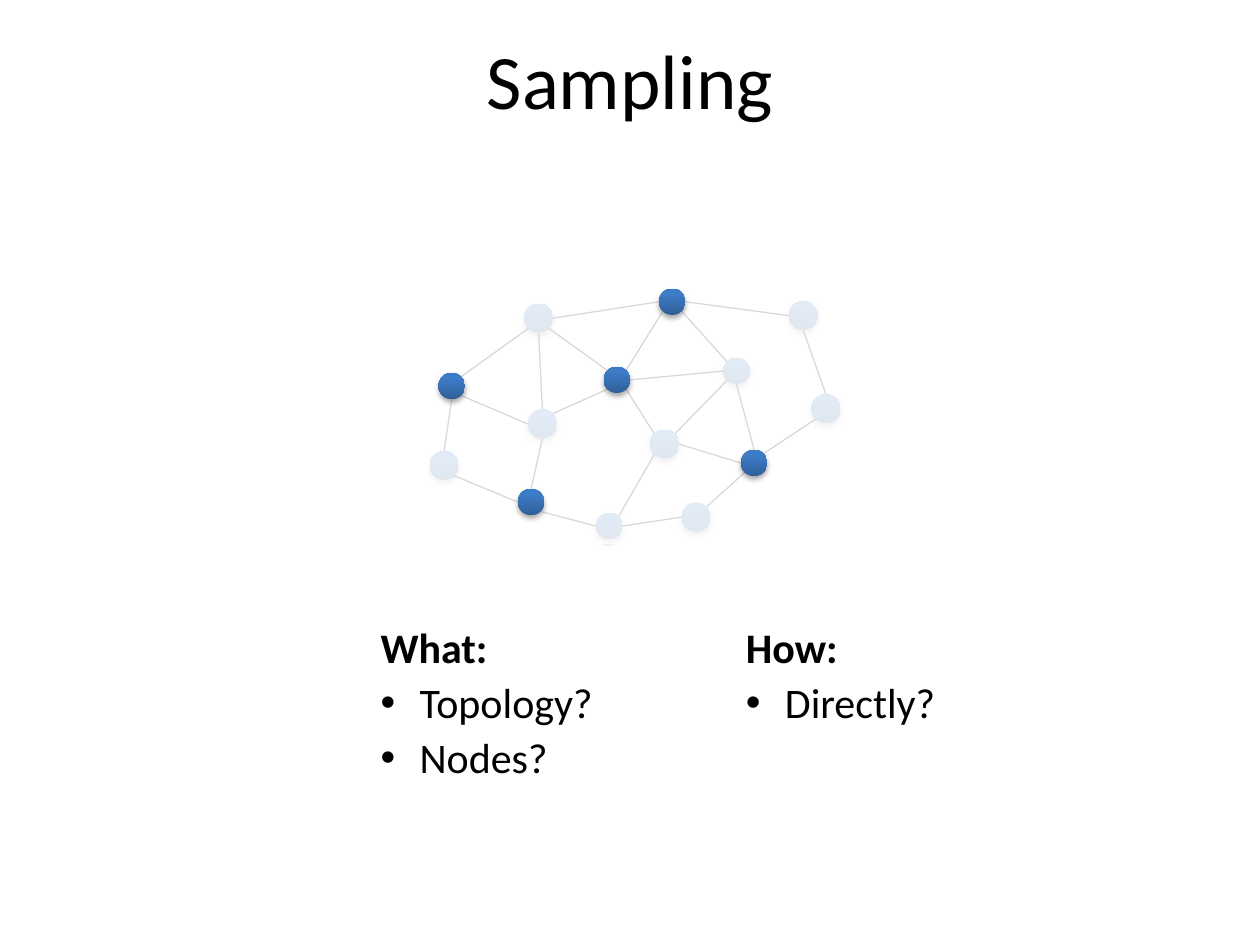
from collections import namedtuple
from math import sqrt

from lxml.etree import SubElement
from pptx import Presentation
from pptx.dml.color import RGBColor as Rgb
from pptx.enum.shapes import MSO_CONNECTOR as Link, MSO_SHAPE as Preset
from pptx.enum.text import MSO_ANCHOR as Anchor, MSO_AUTO_SIZE as Fit, PP_ALIGN as Align
from pptx.oxml.ns import qn
from pptx.util import Inches, Pt

Box = namedtuple("Box", "left top width height")
Node = namedtuple("Node", "column row span sampled")

THEME = {
    "font": "Calibri",
    "ink": Rgb.from_string("000000"),
    "paper": Rgb.from_string("FFFFFF"),
    "gradient": ((0, "2F5F99"), (80, "3D7CC7"), (100, "3A7CCB")),
    "title": Pt(44),
    "list": Pt(24),
    "edge": Pt(0.75),
    "veil_opacity": 85,
    "shadow_opacity": 35,
}

CELL = Inches(0.01)
COLUMNS, ROWS = 1000, 750
TITLE_BOX = Box(50, 0, 900, 125)
NETWORK_BOX = Box(325, 228, 369, 204)
QUESTIONS = (
    (Box(292, 488, 190, 139), "What:", ("Topology?", "Nodes?")),
    (Box(582, 488, 190, 139), "How:", ("Directly?",)),
)

NODES = {
    "A": Node(198, 1, 21, True),
    "B": Node(91, 13, 23, False),
    "C": Node(301, 11, 23, False),
    "D": Node(319, 85, 23, False),
    "E": Node(249, 56, 21, False),
    "F": Node(154, 63, 21, True),
    "G": Node(191, 113, 23, False),
    "H": Node(263, 129, 21, True),
    "I": Node(216, 171, 23, False),
    "J": Node(148, 179, 21, False),
    "K": Node(86, 160, 21, True),
    "L": Node(16, 130, 23, False),
    "M": Node(23, 68, 21, True),
    "N": Node(94, 97, 23, False),
}
EDGES = (
    "K SE J W", "B E A W", "N NE F SW", "B SE F NW", "H N E S", "C S D N",
    "A E C W", "D SW H NE", "H SW I NE", "A SE E NW", "J E I W", "F NE A SW",
    "F E E W", "F SE G NW", "E SW G NE", "G SW J NE", "G E H W", "N S K N",
    "M SE N W", "M S L N", "L SE K W", "M NE B SW", "B S N N",
)


def apply(target, formats):
    for key, value in formats.items():
        setattr(target, key, value)


def place(shape, box):
    apply(shape, {key: value * CELL for key, value in box._asdict().items()})


def style_run(run, size, bold=False):
    apply(run.font, {"name": THEME["font"], "size": size, "bold": bold})
    run.font.color.rgb = THEME["ink"]


def rim_point(box, node, bearing):
    x = ("E" in bearing) - ("W" in bearing)
    y = ("S" in bearing) - ("N" in bearing)
    reach = node.span / 2 / sqrt(x * x + y * y)
    centre = node.span / 2
    return (int((box.left + node.column + centre + x * reach) * CELL),
            int((box.top + node.row + centre + y * reach) * CELL))


def add_edge(slide, box, edge):
    start, leaving, end, arriving = edge.split()
    connector = slide.shapes.add_connector(
        Link.STRAIGHT,
        *rim_point(box, NODES[start], leaving),
        *rim_point(box, NODES[end], arriving))
    connector.line.color.rgb = THEME["ink"]
    connector.line.width = THEME["edge"]
    SubElement(connector.element.spPr, qn("a:effectLst"))


def add_node(slide, box, node):
    circle = slide.shapes.add_shape(Preset.OVAL, 0, 0, CELL, CELL)
    place(circle, Box(box.left + node.column, box.top + node.row, node.span, node.span))
    properties = circle.element.spPr
    gradient = SubElement(properties, qn("a:gradFill"), rotWithShape="1")
    stops = SubElement(gradient, qn("a:gsLst"))
    for share, color in THEME["gradient"]:
        stop = SubElement(stops, qn("a:gs"), pos=str(share * 1000))
        SubElement(stop, qn("a:srgbClr"), val=color)
    SubElement(gradient, qn("a:lin"), ang=str(270 * 60000), scaled="0")
    circle.line.fill.background()
    circle.shadow.inherit = False
    shadow = SubElement(
        properties.find(qn("a:effectLst")), qn("a:outerShdw"),
        blurRad=str(Pt(3.1)), dist=str(Pt(1.8)), dir=str(90 * 60000), rotWithShape="0")
    shade = SubElement(shadow, qn("a:srgbClr"), val=str(THEME["ink"]))
    SubElement(shade, qn("a:alpha"), val=str(THEME["shadow_opacity"] * 1000))


def add_veil(slide, box):
    veil = slide.shapes.add_shape(Preset.RECTANGLE, 0, 0, CELL, CELL)
    place(veil, box)
    veil.fill.solid()
    veil.fill.fore_color.rgb = THEME["paper"]
    tint = veil.element.spPr.find(qn("a:solidFill")).find(qn("a:srgbClr"))
    SubElement(tint, qn("a:alpha"), val=str(THEME["veil_opacity"] * 1000))
    veil.line.fill.background()
    veil.shadow.inherit = False


def add_network(slide, box):
    for edge in EDGES:
        add_edge(slide, box, edge)
    for sampled in (False, True):
        for node in NODES.values():
            if node.sampled == sampled:
                add_node(slide, box, node)
        if not sampled:
            add_veil(slide, box)


def fill_title(title, box, wording):
    place(title, box)
    title.text_frame.vertical_anchor = Anchor.MIDDLE
    heading = title.text_frame.paragraphs[0]
    heading.alignment = Align.CENTER
    run = heading.add_run()
    run.text = wording
    style_run(run, THEME["title"])


def fill_questions(body, box, heading, items):
    place(body, box)
    frame = body.text_frame
    apply(frame, {"auto_size": Fit.NONE, "word_wrap": True, "vertical_anchor": Anchor.TOP})
    for index, wording in enumerate((heading, *items)):
        entry = frame.add_paragraph() if index else frame.paragraphs[0]
        apply(entry, {"space_before": Pt(0), "space_after": Pt(2.8)})
        run = entry.add_run()
        run.text = wording
        style_run(run, THEME["list"], bold=index == 0)
        settings = entry._p.get_or_add_pPr()
        hang = Inches(0.31) if index else 0
        settings.set("marL", str(hang))
        settings.set("indent", str(-hang))
        if index:
            SubElement(settings, qn("a:buFont"), typeface="Arial")
            SubElement(settings, qn("a:buChar"), char="•")
        else:
            SubElement(settings, qn("a:buNone"))


def main():
    deck = Presentation()
    apply(deck, {"slide_width": COLUMNS * CELL, "slide_height": ROWS * CELL})
    slide = deck.slides.add_slide(deck.slide_layouts.get_by_name("Two Content"))
    title, *bodies = list(slide.placeholders)[:3]
    fill_title(title, TITLE_BOX, "Sampling")
    for body, question in zip(bodies, QUESTIONS):
        fill_questions(body, *question)
    add_network(slide, NETWORK_BOX)
    deck.save("out.pptx")


if __name__ == "__main__":
    main()
